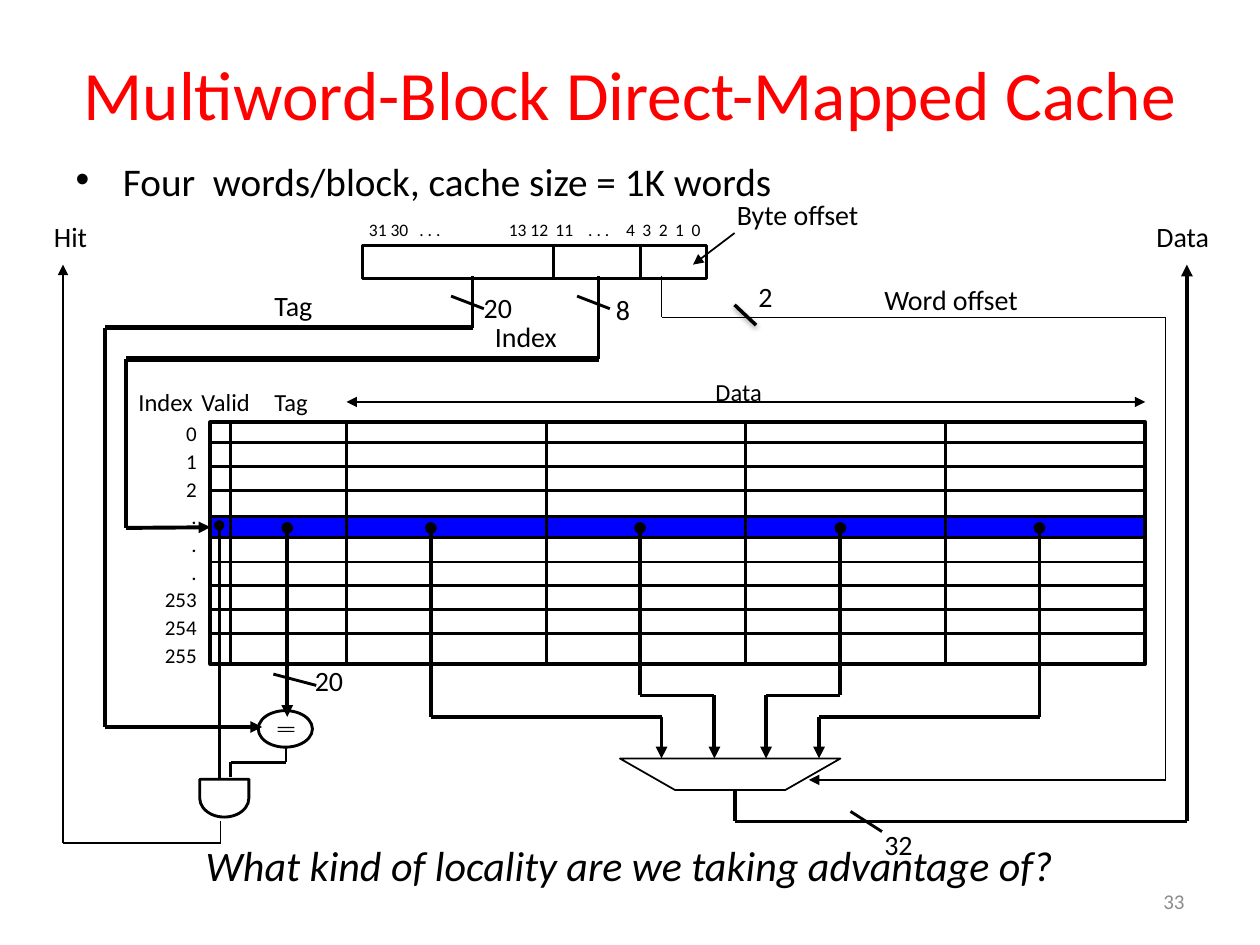
import dataclasses

import lxml.etree
import pptx
import pptx.dml.color
import pptx.enum.shapes
import pptx.enum.text
import pptx.oxml.ns
import pptx.util

Inches = pptx.util.Inches
Shape = pptx.enum.shapes.MSO_SHAPE
Align = pptx.enum.text.PP_ALIGN
Anchor = pptx.enum.text.MSO_ANCHOR
AutoSize = pptx.enum.text.MSO_AUTO_SIZE

BLACK, RED, BLUE, GRAY = "000000", "FF0000", "0000FF", "8C8C8C"
HAIR, THIN, BUS, HEAVY = 1, 1.63, 2.25, 3


def color(value):
    return pptx.dml.color.RGBColor.from_string(value)


def add_xml(parent, tag, **attributes):
    return lxml.etree.SubElement(parent, pptx.oxml.ns.qn(tag), attributes)


def apply_format(target, values):
    for name, value in values.items():
        setattr(target, name, value)


def write(frame, lines, size, hue=BLACK, italic=False, **paragraph_format):
    frame.text = lines
    font_format = {"name": "Calibri", "size": pptx.util.Pt(size), "italic": italic}
    for paragraph in frame.paragraphs:
        apply_format(paragraph, paragraph_format)
        for run in paragraph.runs:
            apply_format(run.font, font_format)
            run.font.color.rgb = color(hue)


@dataclasses.dataclass
class Region:
    """A box on the slide; its parts are placed in inches from its top left corner."""
    slide: object
    left: float
    top: float
    width: float
    height: float

    def place(self, x, y):
        return Inches(self.left + x), Inches(self.top + y)

    def text(self, x, y, width, height, lines, size=16, wrap=False, **text_format):
        box = self.slide.shapes.add_textbox(*self.place(x, y), Inches(width), Inches(height))
        box.text_frame.word_wrap = wrap
        write(box.text_frame, lines, size, **text_format)
        return box

    def shape(self, kind, x, y, width, height, line=THIN, fill=None):
        shape = self.slide.shapes.add_shape(
            kind, *self.place(x, y), Inches(width), Inches(height))
        shape.shadow.inherit = False
        if fill:
            shape.fill.solid()
            shape.fill.fore_color.rgb = color(fill)
        else:
            shape.fill.background()
        if line:
            shape.line.width = pptx.util.Pt(line)
            shape.line.color.rgb = color(BLACK)
        else:
            shape.line.fill.background()
        return shape

    def wire(self, points, width=BUS, head=None, tail=None):
        """Join the points with straight connectors and return the last one."""
        last = len(points) - 2
        for index, (start, end) in enumerate(zip(points, points[1:])):
            connector = self.slide.shapes.add_connector(
                pptx.enum.shapes.MSO_CONNECTOR.STRAIGHT, *self.place(*start), *self.place(*end))
            connector.line.width = pptx.util.Pt(width)
            connector.line.color.rgb = color(BLACK)
            properties = connector.element.spPr
            line = properties.find(pptx.oxml.ns.qn("a:ln"))
            if head and index == 0:
                add_xml(line, "a:headEnd", type=head)
            if tail and index == last:
                add_xml(line, "a:tailEnd", type=tail)
            add_xml(properties, "a:effectLst")
        return connector


def add_shadow(connector):
    effects = connector.element.spPr.find(pptx.oxml.ns.qn("a:effectLst"))
    shadow = add_xml(effects, "a:outerShdw", blurRad=str(pptx.util.Pt(3.1)),
                     dist=str(pptx.util.Pt(1.6)), dir="5400000", rotWithShape="0")
    add_xml(add_xml(shadow, "a:srgbClr", val=BLACK), "a:alpha", val="38000")


def fill_placeholder(placeholder, region, lines, size, **text_format):
    apply_format(placeholder, {
        "left": Inches(region.left), "top": Inches(region.top),
        "width": Inches(region.width), "height": Inches(region.height)})
    placeholder.text_frame.auto_size = AutoSize.NONE
    write(placeholder.text_frame, lines, size, **text_format)


def address_register(region):
    region.shape(Shape.RECTANGLE, 0, 0, region.width, region.height)
    for x in (1.51, 2.2):
        region.wire([(x, 0), (x, region.height)], THIN)
    bits = region.text(-0.05, -0.26, 3.35, 0.27,
                       "31 30\t. . .\t13 12\t11\t. . .\t4\t3\t2\t1\t0", 10, wrap=True)
    tabs = add_xml(bits.text_frame.paragraphs[0].runs[0].font._element.getparent()
                   .getparent().get_or_add_pPr(), "a:tabLst")
    low_bits = [2.04 + 0.13 * index for index in range(5)]
    for position in [0.4, 1.11, 1.48, 1.74] + low_bits:
        add_xml(tabs, "a:tab", pos=str(Inches(position)), algn="l")
    region.text(2.87, -0.43, 1.5, 0.37, "Byte offset", wrap=True)
    region.wire([(2.95, -0.1), (2.62, 0.15)], HAIR, tail="triangle")


def address_field(region, name, name_box, bits, bits_box, run_y, end_x):
    """Lead one field of the address left, down and into its target."""
    right = region.width
    region.wire([(right - 0.17, 0.16), (right + 0.09, 0.26)], THIN)
    region.text(*bits_box, bits)
    region.text(*name_box, name)
    region.wire([(right, 0), (right, run_y)])
    region.wire([(right, run_y), (0, run_y)], HEAVY)
    return region.wire([(0, run_y), (0, region.height), (end_x, region.height)],
                       tail="triangle")


def cache_array(region):
    """Draw the cache lines and return the selected one."""
    width, height = region.width, region.height
    selected = region.shape(Shape.RECTANGLE, 0, 0.75, width, 0.17, fill=BLUE)
    for first, count in ((0.16, 3), (1.11, 4)):
        for index in range(count):
            y = first + 0.19 * index
            region.wire([(0, y), (width, y)], THIN)
    region.shape(Shape.RECTANGLE, 0, 0, width, height, BUS)
    for x in [0.16] + [1.08 + 6.34 / 4 * index for index in range(4)]:
        region.wire([(x, 0), (x, height)], THIN)
    for x, y, label_width, label in ((3.91, -0.41, 0.61, "Data"), (-0.67, -0.33, 0.68, "Index"),
                                     (0.41, -0.33, 0.53, "Tag"), (-0.17, -0.33, 0.63, "Valid")):
        region.text(x, y, label_width, 0.33, label, 14)
    region.text(-0.49, -0.08, 0.48, 2.09, "0\n1\n2\n.\n.\n.\n253\n254\n255", 12,
                alignment=Align.RIGHT, line_spacing=1.1)
    region.wire([(1.08, -0.16), (width, -0.16)], HAIR, "triangle", "triangle")
    return selected


def hit_logic(region):
    region.wire([(1.67, 3.66), (2.01, 3.75)], THIN)
    region.text(1.9, 3.53, 0.45, 0.37, "20")
    region.wire([(1.78, 2.5), (1.78, 4)], head="oval", tail="triangle")
    region.shape(Shape.OVAL, 1.55, 3.95, 0.43, 0.29)
    equal_sign = region.shape(Shape.MATH_EQUAL, 1.68, 4.05, 0.18, 0.1, line=None, fill=BLACK)
    equal_sign.adjustments[0], equal_sign.adjustments[1] = 0.1, 0.2
    and_gate = region.shape(Shape.FLOWCHART_DELAY, 1.13, 4.45, 0.3, 0.39)
    and_gate.rotation = 90
    region.wire([(1.24, 2.48), (1.24, 4.5)], THIN, head="oval")
    region.wire([(1.77, 4.24), (1.77, 4.36), (1.33, 4.36), (1.33, 4.48)], THIN)
    region.wire([(1.25, 4.83), (1.25, 5), (0, 5), (0, 0.41)], HAIR, tail="triangle")
    region.text(-0.17, 0, 0.47, 0.37, "Hit")


def word_selection(region):
    for word_x, turn_y, input_x in ((0, 4, 1.83), (1.66, 3.83, 2.25),
                                    (3.25, 3.83, 2.66), (4.83, 4, 3.08)):
        region.wire([(word_x, 2.5), (word_x, turn_y), (input_x, turn_y), (input_x, 4.33)],
                    head="oval", tail="triangle")
    multiplexer = region.shape(Shape.TRAPEZOID, 1.5, 4.33, 1.75, 0.25, HAIR)
    multiplexer.adjustments[0] = 1.75
    multiplexer.rotation = 180
    region.wire([(2.41, 4.58), (2.41, 4.83), (6, 4.83), (6, 0.41)], tail="triangle")
    region.wire([(3.33, 4.75), (3.58, 4.91)], THIN)
    region.text(3.5, 4.83, 0.45, 0.37, "32")
    region.text(5.66, 0, 0.67, 0.37, "Data")
    region.text(3.5, 0.5, 1.75, 0.37, "Word offset", wrap=True)
    region.wire([(1.83, 0.5), (1.83, 0.83), (5.83, 0.83), (5.83, 4.5), (3, 4.5)],
                HAIR, tail="triangle")
    region.text(2.5, 0.48, 0.32, 0.37, "2")
    add_shadow(region.wire([(2.41, 0.73), (2.58, 0.89)], 2))


def footer(region):
    region.text(0, 0, region.width, 0.5, "What kind of locality are we taking advantage of?", 24,
                wrap=True, italic=True, alignment=Align.CENTER, line_spacing=0.9)
    number = region.text(6.59, 0.29, 2.33, 0.4, "33", 12, wrap=True, hue=GRAY,
                         alignment=Align.RIGHT)
    number.text_frame.vertical_anchor = Anchor.MIDDLE


def main():
    presentation = pptx.Presentation()
    apply_format(presentation, {"slide_width": Inches(10), "slide_height": Inches(7.5)})
    slide = presentation.slides.add_slide(presentation.slide_layouts[1])
    fill_placeholder(slide.shapes.title, Region(slide, 0.5, 0.25, 9, 0.97),
                     "Multiword-Block Direct-Mapped Cache", 39.6, hue=RED,
                     alignment=Align.CENTER)
    fill_placeholder(slide.placeholders[1], Region(slide, 0.5, 1.33, 8.83, 0.58),
                     "Four  words/block, cache size = 1K words", 22.4, line_spacing=0.6)
    selected = cache_array(Region(slide, 1.67, 3.35, 7.42, 1.92))
    address_register(Region(slide, 2.88, 1.95, 2.73, 0.26))
    address_field(Region(slide, 0.83, 2.19, 2.92, 3.58), "Tag", (1.25, 0.05, 0.58, 0.37),
                  "20", (2.91, 0.07, 0.45, 0.37), 0.41, 1.25)
    index_arrow = address_field(Region(slide, 1, 2.19, 3.75, 2), "Index",
                                (2.83, 0.3, 0.74, 0.37), "8", (3.79, 0.08, 0.33, 0.37),
                                0.66, 0.67)
    index_arrow.end_connect(selected, 1)
    hit_logic(Region(slide, 0.5, 1.69, 1.98, 5))
    word_selection(Region(slide, 3.42, 1.69, 6, 4.83))
    footer(Region(slide, 0.58, 6.66, 8.83, 0.69))
    presentation.save("out.pptx")


if __name__ == "__main__":
    main()
